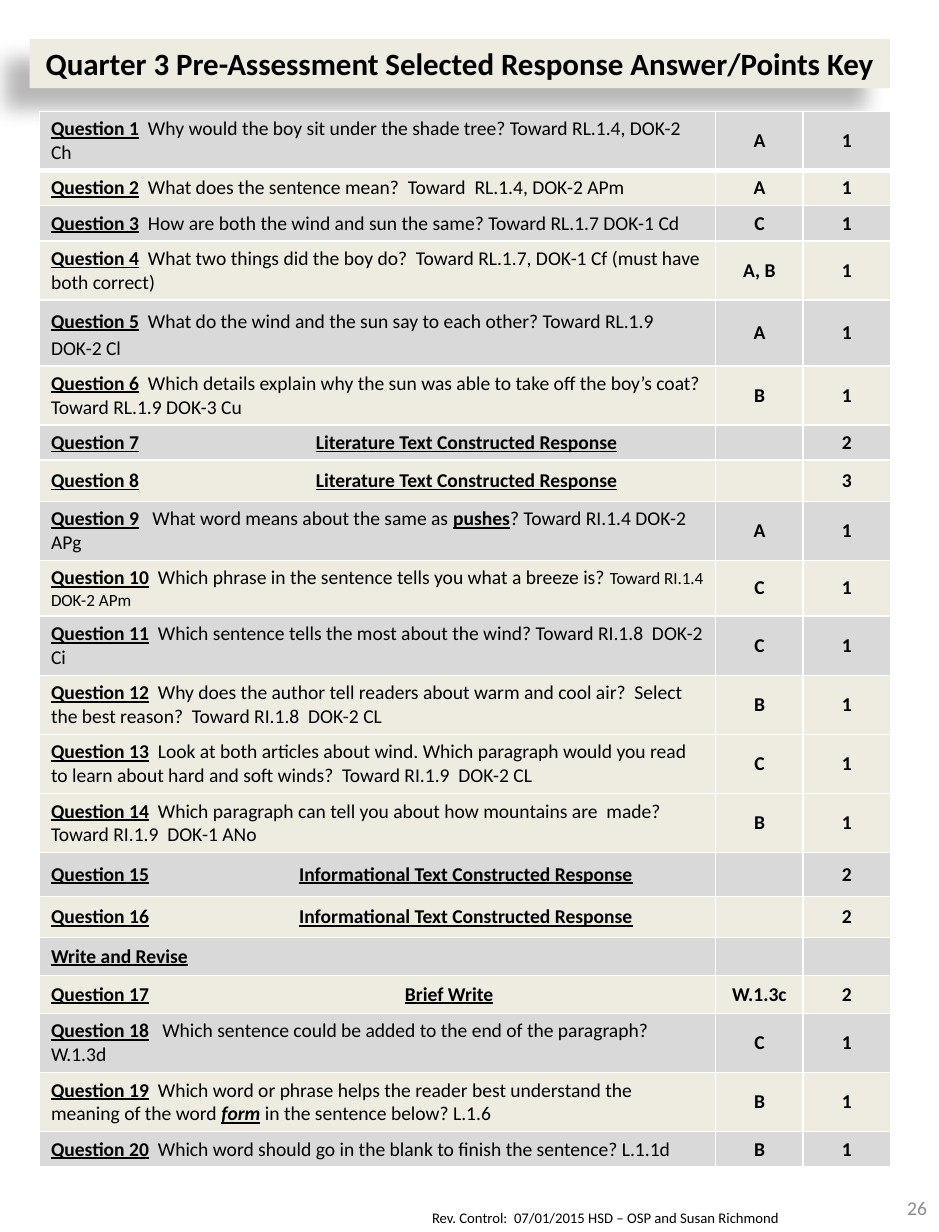
from dataclasses import dataclass
from typing import Any

from lxml.etree import SubElement
from pptx import Presentation
from pptx.dml.color import RGBColor
from pptx.enum.shapes import MSO_SHAPE
from pptx.enum.text import MSO_ANCHOR, PP_ALIGN
from pptx.oxml.ns import qn
from pptx.util import Cm, Pt

BLACK = RGBColor(0x00, 0x00, 0x00)
GRAY = RGBColor(0xD9, 0xD9, 0xD9)
CREAM = RGBColor(0xEE, 0xEC, 0xE1)
PAGE_GRAY = RGBColor(0x8C, 0x8C, 0x8C)
WHITE = RGBColor(0xFF, 0xFF, 0xFF)

PLAIN = {"name": "Calibri", "size": Pt(12), "bold": False}
SMALL = PLAIN | {"size": Pt(10.5)}
BOLD = PLAIN | {"bold": True}
LABEL = BOLD | {"underline": True}
EMPHASIS = LABEL | {"italic": True}
HEADING = BOLD | {"size": Pt(19)}
FOOTER = PLAIN | {"size": Pt(9)}

ONE_LINE, TWO_LINES = 0.76, 1.28
COLUMN_WIDTHS = (14.64, 1.89, 1.89)


@dataclass(frozen=True)
class Span:
    text: str
    style: dict[str, Any]
    color: RGBColor = BLACK


@dataclass(frozen=True)
class KeyRow:
    label: str
    spans: tuple[Span, ...]
    answer: str
    points: str
    height: float = TWO_LINES
    tab: float = 0
    spacing: float = 1
    fill: RGBColor | None = None


def question(number: int, text: str, answer: str, *more: Span, **options: Any) -> KeyRow:
    """Describe a one-point selected response question."""
    return KeyRow(f"Question {number}", (Span(text, PLAIN), *more), answer, "1", **options)


def written(number: int, task: str, points: str, tab: float, height: float, standard: str = "") -> KeyRow:
    """Describe a written task whose name stands at a tab stop."""
    spans = (Span("\t", BOLD), Span(task, LABEL))
    return KeyRow(f"Question {number}", spans, standard, points, height, tab)


LITERATURE = "Literature Text Constructed Response"
INFORMATIONAL = "Informational Text Constructed Response"
KEY_ROWS = (
    question(1, "  Why would the boy sit under the shade tree? Toward RL.1.4, DOK-2 Ch", "A"),
    question(2, "  What does the sentence mean?  Toward  RL.1.4, DOK-2 APm", "A", height=ONE_LINE),
    question(3, "  How are both the wind and sun the same? Toward RL.1.7 DOK-1 Cd", "C", height=ONE_LINE),
    question(4, "  What two things did the boy do?  Toward RL.1.7, DOK-1 Cf (must have both correct)", "A, B"),
    question(5, "  What do the wind and the sun say to each other? Toward RL.1.9 DOK-2 Cl", "A",
             height=1.4, spacing=1.15),
    question(6, "  Which details explain why the sun was able to take off the boy’s coat? "
                "Toward RL.1.9 DOK-3 Cu", "B"),
    written(7, LITERATURE, "2", 5.73, ONE_LINE),
    written(8, LITERATURE, "3", 5.73, 0.89),
    question(9, "   What word means about the same as ", "A",
             Span("pushes", LABEL), Span("? Toward RI.1.4 DOK-2 APg", PLAIN)),
    question(10, "  Which phrase in the sentence tells you what a breeze is? ", "C",
             Span("Toward RI.1.4 DOK-2 APm", SMALL), height=1.2),
    question(11, "  Which sentence tells the most about the wind? Toward RI.1.8  DOK-2 Ci", "C"),
    question(12, "  Why does the author tell readers about warm and cool air?  Select the best reason?  "
                 "Toward RI.1.8  DOK-2 CL", "B"),
    question(13, "  Look at both articles about wind. Which paragraph would you read to learn about "
                 "hard and soft winds?  Toward RI.1.9  DOK-2 CL", "C", fill=CREAM),
    question(14, "  Which paragraph can tell you about how mountains are  made? "
                 "Toward RI.1.9  DOK-1 ANo", "B"),
    written(15, INFORMATIONAL, "2", 5.37, 0.95),
    written(16, INFORMATIONAL, "2", 5.37, 0.89),
    KeyRow("Write and Revise", (), "", "", 0.82),
    written(17, "Brief Write", "2", 7.66, 0.82, "W.1.3c"),
    question(18, "   Which sentence could be added to the end of the paragraph?  W.1.3d", "C"),
    question(19, "  Which word or phrase helps the reader best understand the  meaning of the word ", "B",
             Span("form", EMPHASIS), Span(" in the sentence below? L.1.6", PLAIN)),
    question(20, "  Which word should go in the blank to finish the sentence? L.1.1d", "B", height=ONE_LINE),
)


def write(paragraph: Any, spans: tuple[Span, ...], align: PP_ALIGN = PP_ALIGN.LEFT) -> None:
    """Fill a paragraph with formatted runs."""
    paragraph.alignment = align
    for span in spans:
        run = paragraph.add_run()
        run.text = span.text
        for attribute, value in span.style.items():
            setattr(run.font, attribute, value)
        run.font.color.rgb = span.color
    SubElement(paragraph._p, qn("a:endParaRPr"), sz="1200")


def add_border(cell: Any, side: str, width: float) -> None:
    """Give one side of a cell a white line."""
    line = SubElement(cell._tc.get_or_add_tcPr(), qn(f"a:{side}"), w=str(int(Pt(width))))
    SubElement(SubElement(line, qn("a:solidFill")), qn("a:srgbClr"), val=str(WHITE))


def draw_row(table: Any, index: int, row: KeyRow) -> None:
    """Draw one row of the answer key."""
    table.rows[index].height = Cm(row.height)
    contents = (
        (Span(row.label, LABEL), *row.spans),
        (Span(row.answer, BOLD),) if row.answer else (),
        (Span(row.points, BOLD),) if row.points else (),
    )
    for column, spans in enumerate(contents):
        cell = table.cell(index, column)
        for side in ("lnL", "lnR", "lnT", "lnB"):
            thick = (index, side) in ((0, "lnB"), (1, "lnT"))
            add_border(cell, side, 3 if thick else 1)
        cell.fill.solid()
        cell.fill.fore_color.rgb = row.fill or (CREAM if index % 2 else GRAY)
        cell.vertical_anchor = MSO_ANCHOR.MIDDLE
        write(cell.text_frame.paragraphs[0], spans, PP_ALIGN.CENTER if column else PP_ALIGN.LEFT)
    statement = table.cell(index, 0).text_frame.paragraphs[0]
    if row.spacing != 1:
        statement.line_spacing = row.spacing
    if row.tab:
        stops = SubElement(statement._p.get_or_add_pPr(), qn("a:tabLst"))
        SubElement(stops, qn("a:tab"), pos=str(int(Cm(row.tab))), algn="l")


def draw_key(slide: Any) -> None:
    """Draw the table of questions, answers and points."""
    height = sum(row.height for row in KEY_ROWS)
    frame = slide.shapes.add_table(len(KEY_ROWS), len(COLUMN_WIDTHS), Cm(0.85), Cm(2.41),
                                   Cm(sum(COLUMN_WIDTHS)), Cm(height))
    table = frame.table
    table.first_row = table.horz_banding = False
    for column, width in zip(table.columns, COLUMN_WIDTHS):
        column.width = Cm(width)
    for index, row in enumerate(KEY_ROWS):
        draw_row(table, index, row)


def draw_heading(slide: Any) -> None:
    """Draw the heading bar with its soft shadow."""
    bar = slide.shapes.add_shape(MSO_SHAPE.RECTANGLE, Cm(0.64), Cm(0.84), Cm(18.62), Cm(1.07))
    bar.fill.solid()
    bar.fill.fore_color.rgb = CREAM
    bar.line.fill.background()
    bar.shadow.inherit = False
    effects = bar._element.spPr.find(qn("a:effectLst"))
    shadow = SubElement(effects, qn("a:outerShdw"), blurRad=str(int(Pt(11.8))),
                        dist=str(int(Pt(19.7))), dir=str(141 * 60000), algn="ctr", rotWithShape="0")
    tone = SubElement(shadow, qn("a:srgbClr"), val=str(BLACK))
    SubElement(tone, qn("a:alpha"), val="28000")
    bar.text_frame.word_wrap = True
    title = Span("Quarter 3 Pre-Assessment Selected Response Answer/Points Key", HEADING)
    write(bar.text_frame.paragraphs[0], (title,), PP_ALIGN.CENTER)


def draw_note(slide: Any, box: tuple[float, ...], span: Span, align: PP_ALIGN, anchor: MSO_ANCHOR) -> None:
    """Draw a small line of text at the foot of the page."""
    frame = slide.shapes.add_textbox(*map(Cm, box)).text_frame
    settings = {"word_wrap": True, "vertical_anchor": anchor, "margin_left": Cm(0.26), "margin_right": Cm(0.26)}
    for attribute, value in settings.items():
        setattr(frame, attribute, value)
    write(frame.paragraphs[0], (span,), align)


def main() -> None:
    """Build the answer key page."""
    presentation = Presentation()
    presentation.slide_width, presentation.slide_height = Cm(20.32), Cm(26.67)
    slide = presentation.slides.add_slide(presentation.slide_layouts[6])
    revision = Span("Rev. Control:  07/01/2015 HSD – OSP and Susan Richmond", FOOTER)
    draw_note(slide, (9.09, 26.04, 10.16, 0.64), revision, PP_ALIGN.LEFT, MSO_ANCHOR.TOP)
    draw_note(slide, (18.11, 25.6, 2.21, 1.07), Span("26", PLAIN, PAGE_GRAY), PP_ALIGN.RIGHT, MSO_ANCHOR.MIDDLE)
    draw_heading(slide)
    draw_key(slide)
    presentation.save("out.pptx")


if __name__ == "__main__":
    main()
